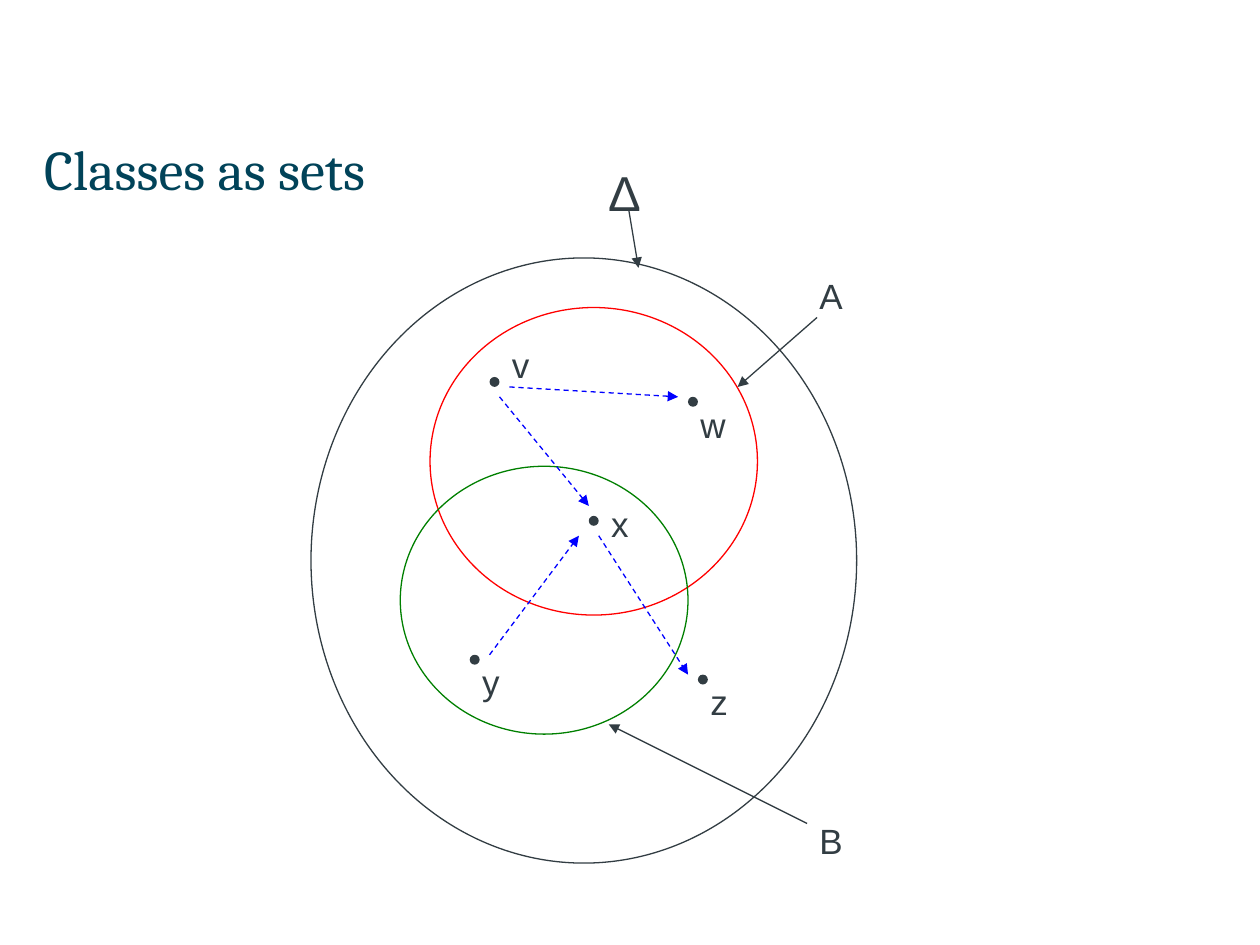
from lxml import etree
from pptx import Presentation
from pptx.dml.color import RGBColor
from pptx.enum.dml import MSO_LINE
from pptx.enum.shapes import MSO_CONNECTOR, MSO_SHAPE
from pptx.enum.text import MSO_ANCHOR
from pptx.oxml.ns import qn
from pptx.util import Cm, Pt

COLORS = {"title": "014359", "ink": "323D43", "red": "FF0000", "green": "008000", "blue": "0000FF"}
OVAL = MSO_SHAPE.OVAL
STRAIGHT = MSO_CONNECTOR.STRAIGHT
DASH = MSO_LINE.DASH
MIDDLE = MSO_ANCHOR.MIDDLE
LINE_WIDTH = Pt(0.75)
DOT_SIZE = 0.2

SETS = [
    (0, 0, 11, 12.2, "ink"),
    (2.4, 1, 6.6, 6.2, "red"),
    (1.8, 4.2, 5.8, 5.4, "green"),
]
INDIVIDUALS = [
    ("v", 3.6, 2.4, 0.2, -0.8),
    ("w", 7.6, 2.8, 0, 0),
    ("x", 5.6, 5.2, 0.2, -0.4),
    ("y", 3.2, 8, 0, 0),
    ("z", 7.8, 8.4, 0, 0),
]
RELATIONS = [
    (4, 2.6, 7.4, 2.8),
    (3.8, 2.8, 5.6, 5),
    (3.6, 8, 5.4, 5.6),
    (5.8, 5.6, 7.6, 8.4),
]
SET_NAMES = [
    ("Δ", 5.74, -2.04, 1.12, 1.45, 28, (6.4, -1, 6.6, 0.2)),
    ("A", 10, 0.2, 1.4, 1.1, 20, (10.2, 1.2, 8.6, 2.6)),
    ("B", 10, 11.2, 1.4, 1.1, 20, (10, 11.4, 6, 9.4)),
]


def rgb(name):
    """Return the named colour."""
    return RGBColor.from_string(COLORS[name])


def add_text(slide, text, left, top, width, height, size, color="ink", font="Arial"):
    """Add a one-line text box and return its frame."""
    frame = slide.shapes.add_textbox(Cm(left), Cm(top), Cm(width), Cm(height)).text_frame
    frame.word_wrap = True
    paragraph = frame.paragraphs[0]
    paragraph.text = text
    paragraph.font.name = font
    paragraph.font.size = Pt(size)
    paragraph.font.color.rgb = rgb(color)
    return frame


def add_oval(slide, left, top, width, height):
    """Add an oval without a shadow."""
    shape = slide.shapes.add_shape(OVAL, Cm(left), Cm(top), Cm(width), Cm(height))
    shape.shadow.inherit = False
    return shape


def add_arrow(slide, left, top, ends, color, dash=None):
    """Add an arrow whose ends are relative to the given corner."""
    x1, y1, x2, y2 = ends
    arrow = slide.shapes.add_connector(
        STRAIGHT, Cm(left + x1), Cm(top + y1), Cm(left + x2), Cm(top + y2))
    arrow.line.color.rgb = rgb(color)
    arrow.line.width = LINE_WIDTH
    if dash:
        arrow.line.dash_style = dash
    etree.SubElement(arrow.line._get_or_add_ln(), qn("a:tailEnd"), type="triangle")
    etree.SubElement(arrow._element.spPr, qn("a:effectLst"))


def add_title(slide, left, top, width, height):
    """Add the slide title."""
    frame = add_text(slide, "Classes as sets", left, top, width, height, 32, "title", "Cambria")
    frame.margin_left = 0
    frame.vertical_anchor = MIDDLE


def add_set_diagram(slide, left, top):
    """Draw the sets, their individuals and the relations between them."""
    for x, y, width, height, color in SETS:
        outline = add_oval(slide, left + x, top + y, width, height)
        outline.fill.background()
        outline.line.color.rgb = rgb(color)
        outline.line.width = LINE_WIDTH
    for name, x, y, label_dx, label_dy in INDIVIDUALS:
        dot = add_oval(slide, left + x, top + y, DOT_SIZE, DOT_SIZE)
        dot.fill.solid()
        dot.fill.fore_color.rgb = rgb("ink")
        dot.line.fill.background()
        add_text(slide, name, left + x + label_dx, top + y + label_dy, 1, 1.1, 20)
    for ends in RELATIONS:
        add_arrow(slide, left, top, ends, "blue", DASH)
    for name, x, y, width, height, size, ends in SET_NAMES:
        add_text(slide, name, left + x, top + y, width, height, size)
        add_arrow(slide, left, top, ends, "ink")


def main():
    """Build and save the presentation."""
    presentation = Presentation()
    presentation.slide_width = Cm(25.4)
    presentation.slide_height = Cm(19.05)
    slide = presentation.slides.add_slide(presentation.slide_layouts[6])
    add_title(slide, 0.89, 2.49, 23.6, 1.8)
    add_set_diagram(slide, 6.27, 5.2)
    presentation.save("out.pptx")


if __name__ == "__main__":
    main()
